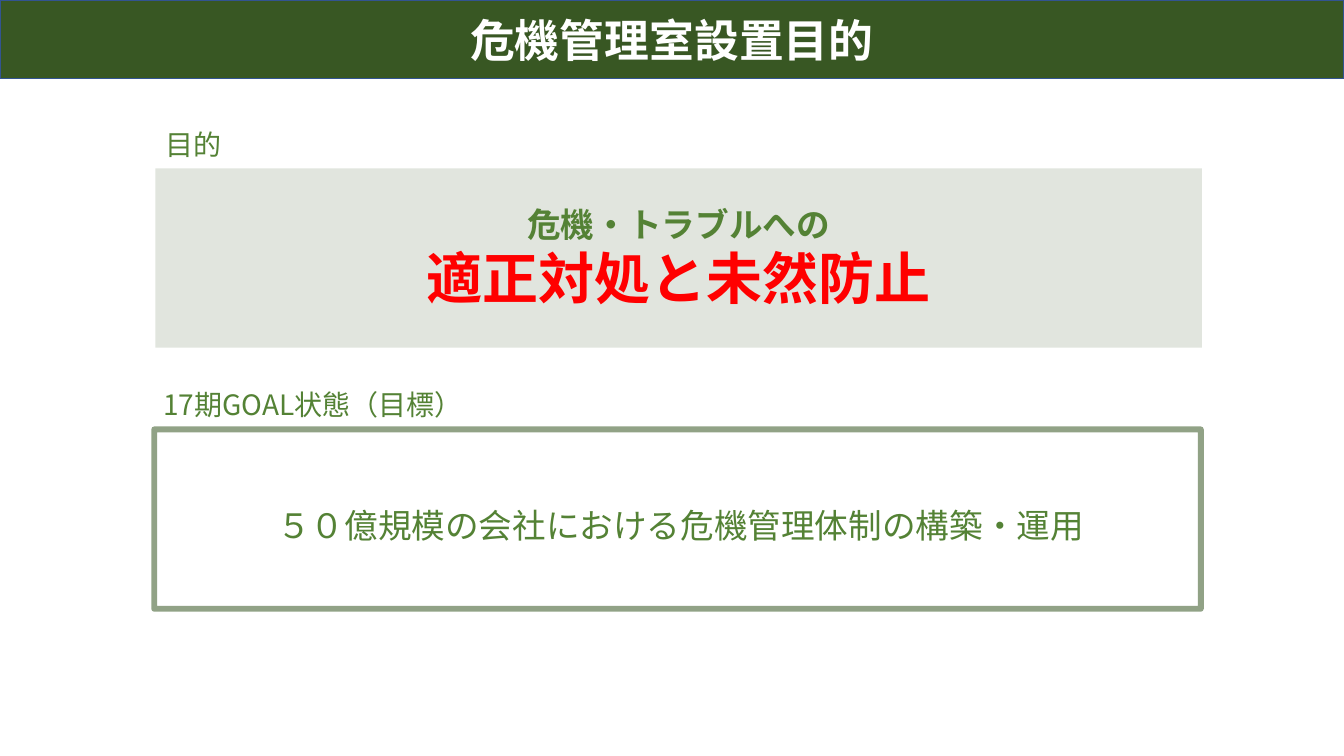
from lxml import etree
from pptx import Presentation
from pptx.dml.color import RGBColor
from pptx.enum.shapes import MSO_SHAPE
from pptx.enum.text import MSO_ANCHOR, PP_ALIGN
from pptx.oxml.ns import qn
from pptx.util import Inches, Pt

RECT = MSO_SHAPE.RECTANGLE
LEFT, CENTER = PP_ALIGN.LEFT, PP_ALIGN.CENTER
TOP, MIDDLE = MSO_ANCHOR.TOP, MSO_ANCHOR.MIDDLE
FONT = "Noto Sans CJK JP"
DARK, GREEN, RED, WHITE, BLUE = "385723", "548235", "FF0000", "FFFFFF", "325491"

SLIDE_W, SLIDE_H = 13.33, 7.5
BOX_W, BOX_H = 10.38, 1.78
TITLE = ("危機管理室設置目的", 32, WHITE, True)
PURPOSE_LABEL = ("目的", 20, GREEN, False)
PURPOSE = [("危機・トラブルへの", 24, GREEN, True),
           ("適正対処と未然防止", 40, RED, True)]
GOAL_LABEL = ("17期GOAL状態（目標）", 20, GREEN, False)
GOAL = ("５０億規模の会社における危機管理体制の構築・運用", 24, GREEN, False)


def rgb(color):
    return RGBColor.from_string(color)


def set_alpha(sp, where, percent):
    clr = sp._element.xpath(f"./p:spPr/{where}a:solidFill/a:srgbClr")[0]
    etree.SubElement(clr, qn("a:alpha"), val=str(percent * 1000))


def add_box(s, at, fill=None, fill_alpha=100, line=None, width=1, line_alpha=100):
    sp = s.shapes.add_shape(RECT, *map(Inches, at))
    sp.shadow.inherit = False
    if fill:
        sp.fill.solid()
        sp.fill.fore_color.rgb = rgb(fill)
        set_alpha(sp, "", fill_alpha)
    else:
        sp.fill.background()
    if line:
        sp.line.color.rgb = rgb(line)
        sp.line.width = Pt(width)
        set_alpha(sp, "a:ln/", line_alpha)
    else:
        sp.line.fill.background()
    return sp


def write(sp, lines, align=CENTER, anchor=TOP):
    tf = sp.text_frame
    tf.word_wrap = True
    tf.vertical_anchor = anchor
    for i, (text, size, color, bold) in enumerate(lines):
        p = tf.add_paragraph() if i else tf.paragraphs[0]
        p.alignment = align
        r = p.add_run()
        r.text = text
        r.font.size = Pt(size)
        r.font.bold = bold
        r.font.color.rgb = rgb(color)
        r.font.name = FONT
        etree.SubElement(r.font._element, qn("a:ea"), typeface=FONT)


def add_text(s, at, lines, **fmt):
    write(s.shapes.add_textbox(*map(Inches, at)), lines, **fmt)


prs = Presentation()
prs.slide_width, prs.slide_height = Inches(SLIDE_W), Inches(SLIDE_H)
s = prs.slides.add_slide(prs.slide_layouts[6])

banner = add_box(s, (0, 0, SLIDE_W, 0.78), fill=DARK, line=BLUE)
write(banner, [TITLE], anchor=MIDDLE)

add_box(s, (1.54, 1.67, BOX_W, BOX_H), fill=DARK, fill_alpha=15)
add_text(s, (1.54, 1.97, BOX_W, 1.18), PURPOSE)
add_text(s, (1.54, 1.22, 5.62, 0.44), [PURPOSE_LABEL], align=LEFT)

add_text(s, (1.73, 4.96, 10.04, 0.5), [GOAL])
add_box(s, (1.53, 4.26, BOX_W, BOX_H), line=DARK, width=4.25, line_alpha=54)
add_text(s, (1.52, 3.8, 8.7, 0.44), [GOAL_LABEL], align=LEFT)

prs.save("out.pptx")
